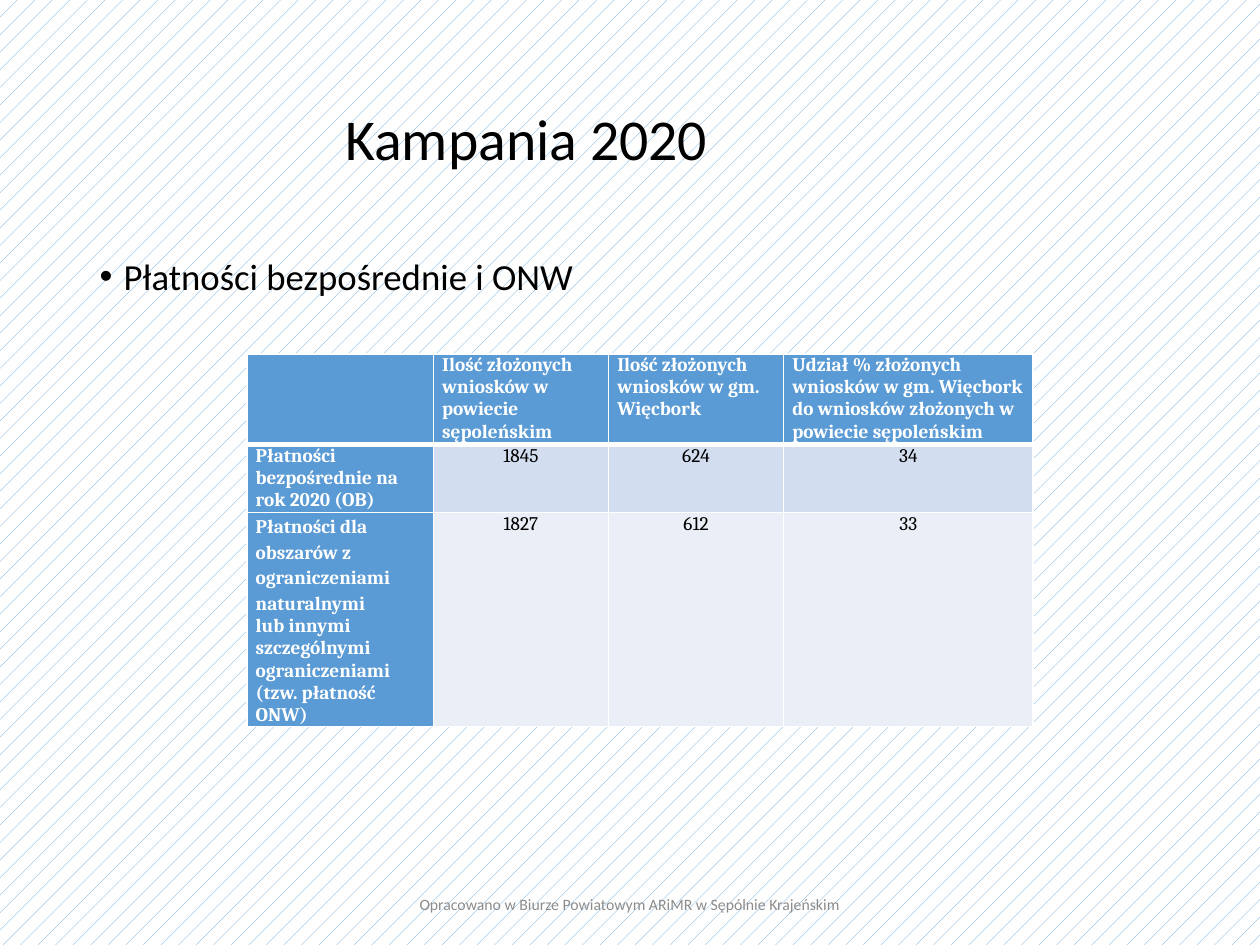
from lxml.etree import SubElement
from pptx import Presentation
from pptx.dml.color import RGBColor
from pptx.enum.dml import MSO_PATTERN
from pptx.enum.text import MSO_ANCHOR, MSO_AUTO_SIZE, PP_ALIGN
from pptx.oxml.ns import qn
from pptx.util import Inches, Pt

TITLE = "Kampania 2020"
BULLET = "Płatności bezpośrednie i ONW"
FOOTER = "Opracowano w Biurze Powiatowym ARiMR w Sępólnie Krajeńskim"
ROWS = [
    ["", "Ilość złożonych wniosków w powiecie sępoleńskim",
     "Ilość złożonych wniosków w gm. Więcbork",
     "Udział % złożonych wniosków w gm. Więcbork do wniosków złożonych w powiecie sępoleńskim"],
    ["Płatności bezpośrednie na rok 2020 (OB)", "1845", "624", "34"],
    ["Płatności dla obszarów z ograniczeniami naturalnymi\n"
     "lub innymi szczególnymi ograniczeniami (tzw. płatność ONW)", "1827", "612", "33"],
]
COLUMN_WIDTHS = [1.48, 1.39, 1.39, 1.98]
ROW_HEIGHTS = [0.72, 0.54, 1.55]
BAND_FILLS = ["D2DEEF", "EAEFF7"]
BLUE, WHITE, BLACK, GREY = "5B9BD5", "FFFFFF", "000000", "8C8C8C"


def color(hex_value):
    return RGBColor.from_string(hex_value)


def style(para, size, hex_value, font="Calibri", bold=False, align=PP_ALIGN.LEFT):
    para.alignment = align
    for span in para.runs:
        span.font.size = Pt(size)
        span.font.name = font
        span.font.bold = bold
        span.font.color.rgb = color(hex_value)


def place(shape, left, top, width, height):
    shape.left, shape.top = Inches(left), Inches(top)
    shape.width, shape.height = Inches(width), Inches(height)


def add_borders(cell, top, bottom):
    """Draw white cell borders; top and bottom are widths in points."""
    properties = cell._tc.get_or_add_tcPr()
    for side, width in (("L", 1), ("R", 1), ("T", top), ("B", bottom)):
        line = SubElement(properties, qn(f"a:ln{side}"), w=str(Pt(width)))
        SubElement(SubElement(line, qn("a:solidFill")), qn("a:srgbClr"), val=WHITE)


def add_footer(slide):
    box = slide.shapes.add_textbox(Inches(3.01), Inches(6.98), Inches(3.97), Inches(0.4))
    frame = box.text_frame
    frame.word_wrap = True
    frame.vertical_anchor = MSO_ANCHOR.MIDDLE
    frame.text = FOOTER
    style(frame.paragraphs[0], 9, GREY, align=PP_ALIGN.CENTER)


def add_payment_table(slide):
    frame = slide.shapes.add_table(
        len(ROWS), len(COLUMN_WIDTHS), Inches(1.96), Inches(2.81),
        Inches(sum(COLUMN_WIDTHS)), Inches(sum(ROW_HEIGHTS)))
    table = frame.table
    for column, width in zip(table.columns, COLUMN_WIDTHS):
        column.width = Inches(width)
    for row_index, (texts, height) in enumerate(zip(ROWS, ROW_HEIGHTS)):
        table.rows[row_index].height = Inches(height)
        for column_index, text in enumerate(texts):
            cell = table.cell(row_index, column_index)
            heading = row_index == 0 or column_index == 0
            cell.margin_left = cell.margin_right = Inches(0.07)
            cell.margin_top = cell.margin_bottom = 0
            add_borders(cell, 3 if row_index == 1 else 1, 3 if row_index == 0 else 1)
            cell.fill.solid()
            cell.fill.fore_color.rgb = color(BLUE if heading else BAND_FILLS[row_index - 1])
            cell.text_frame.text = text
            for para in cell.text_frame.paragraphs:
                style(para, 11, WHITE if heading else BLACK, "Cambria", heading,
                      PP_ALIGN.LEFT if heading else PP_ALIGN.CENTER)
    table.cell(2, 0).text_frame.paragraphs[0].line_spacing = 1.15


def main():
    deck = Presentation()
    deck.slide_width, deck.slide_height = Inches(10), Inches(7.5)
    slide = deck.slides.add_slide(deck.slide_layouts[1])

    background = slide.background.fill
    background.patterned()
    background.pattern = MSO_PATTERN.PERCENT_5
    background.fore_color.rgb = color(BLUE)
    background.back_color.rgb = color(WHITE)

    title, body = slide.shapes.title, slide.placeholders[1]
    place(title, 2.64, 0.4, 3.94, 1.45)
    place(body, 0.69, 2, 8.62, 4.76)
    for shape, text, size in ((title, TITLE, 33), (body, BULLET, 21)):
        frame = shape.text_frame
        frame.text = text
        frame.auto_size = MSO_AUTO_SIZE.NONE
        para = frame.paragraphs[0]
        para.line_spacing = 0.9
        para.space_before = Pt(0)
        style(para, size, BLACK)
    title.text_frame.vertical_anchor = MSO_ANCHOR.MIDDLE
    bullet = body.text_frame.paragraphs[0]._p.get_or_add_pPr()
    bullet.set("marL", str(Inches(0.19)))
    bullet.set("indent", str(-Inches(0.19)))
    SubElement(bullet, qn("a:buFont"), typeface="Arial")
    SubElement(bullet, qn("a:buChar"), char="•")

    add_payment_table(slide)
    add_footer(slide)
    deck.save("out.pptx")


if __name__ == "__main__":
    main()
